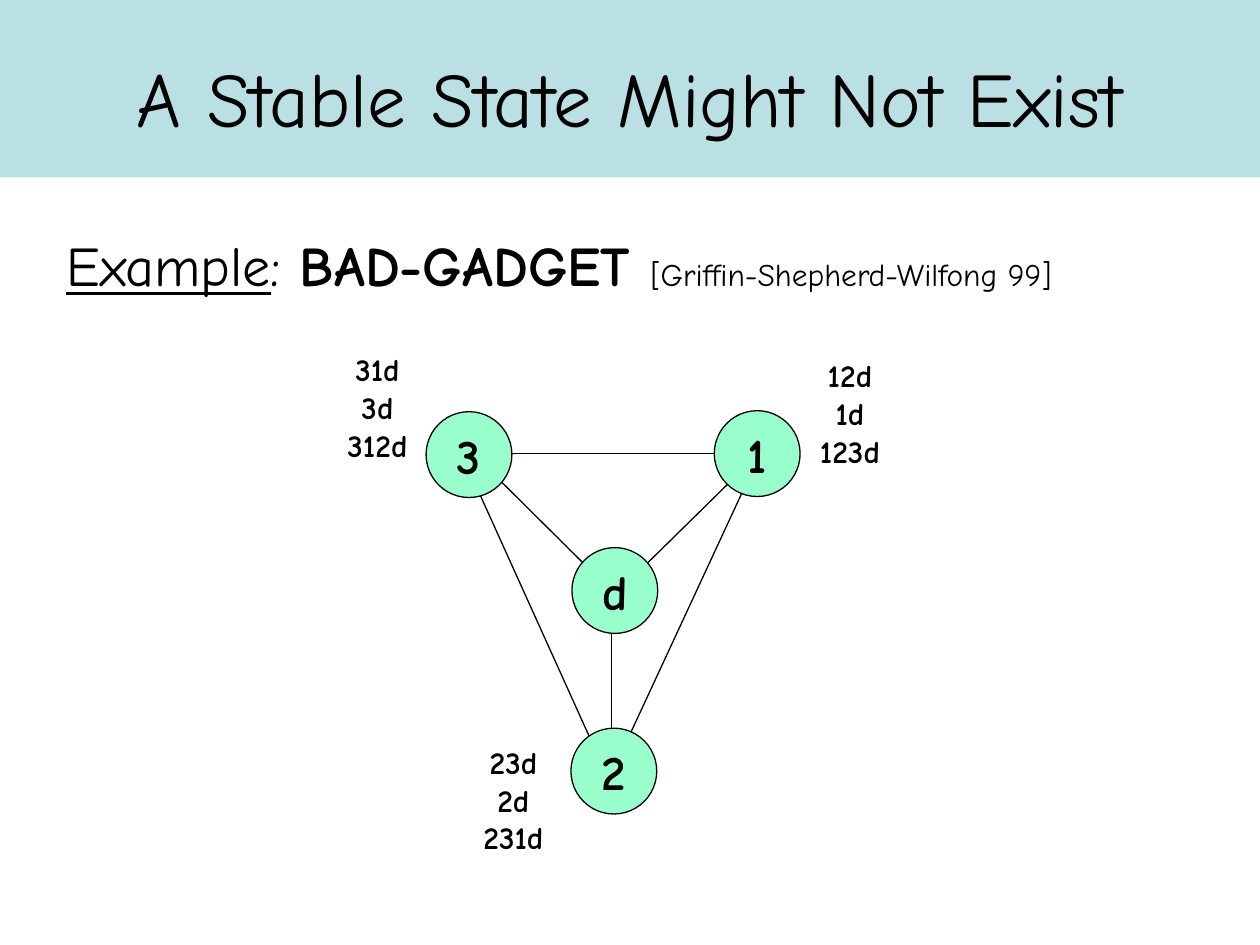
from lxml import etree
from pptx import Presentation
from pptx.dml.color import RGBColor
from pptx.enum.shapes import MSO_CONNECTOR, MSO_SHAPE
from pptx.enum.text import MSO_ANCHOR, PP_ALIGN
from pptx.oxml.ns import qn
from pptx.util import Cm, Pt

RECT, OVAL = MSO_SHAPE.RECTANGLE, MSO_SHAPE.OVAL
LINE = MSO_CONNECTOR.STRAIGHT
MID, TOP = MSO_ANCHOR.MIDDLE, MSO_ANCHOR.TOP
LEFT, CENTER = PP_ALIGN.LEFT, PP_ALIGN.CENTER
FONT = "Comic Neue"
COLORS = {"band": "BBE0E3", "node": "99FFCC", "ink": "000000"}

NODE = 1.73  # node diameter, cm
NODES = {"3": (2.01, 1.37), "1": (7.82, 1.35), "2": (4.93, 7.75), "d": (4.95, 4.11)}
EDGES = [
    (2.92, 2.18, 5.74, 4.98),  # 3 to d
    (2.72, 2.21, 5.59, 8.56),  # 3 to 2
    (5.74, 8.69, 5.74, 5.08),  # 2 to d
    (8.69, 2.24, 5.72, 5.16),  # 1 to d
    (2.82, 2.21, 8.76, 2.21),  # 3 to 1
    (5.87, 8.41, 8.76, 2.18),  # 2 to 1
]
RANKS = [
    (0, 0, 2.06, False, ["31d", "3d", "312d"]),
    (2.74, 7.92, 2.06, False, ["23d", "2d", "231d"]),
    (9.35, 0.13, 2.41, True, ["12d", "1d", "123d"]),
]


def color(name):
    return RGBColor.from_string(COLORS[name])


def write(par, text, size, bold=False, under=False):
    run = par.add_run()
    run.text = text
    font = run.font
    font.name, font.size = FONT, Pt(size)
    font.bold, font.underline = bold, under
    font.color.rgb = color("ink")


def set_frame(shape, align, anchor=MID, wrap=True):
    frame = shape.text_frame
    frame.word_wrap, frame.vertical_anchor = wrap, anchor
    frame.paragraphs[0].alignment = align
    return frame


def add_solid(slide, kind, box, fill):
    shape = slide.shapes.add_shape(kind, *map(Cm, box))
    shape.shadow.inherit = False
    shape.fill.solid()
    shape.fill.fore_color.rgb = color(fill)
    return shape


def add_header(slide, x, y, w, h):
    # Band goes behind the title
    band = add_solid(slide, RECT, (x, y, w, h), "band")
    band.line.fill.background()
    slide.shapes._spTree.insert(2, band._element)
    title = slide.shapes.title
    title.left, title.top = Cm(x + 1.27), Cm(y + 0.36)
    title.width, title.height = Cm(w - 2.54), Cm(3.18)
    frame = set_frame(title, CENTER)
    write(frame.paragraphs[0], "A Stable State Might Not Exist", 44)


def add_intro(slide, x, y, w, h):
    box = slide.shapes.add_textbox(Cm(x), Cm(y), Cm(w), Cm(h))
    par = set_frame(box, LEFT).paragraphs[0]
    write(par, "Example", 32, under=True)
    write(par, ": ", 32)
    write(par, "BAD-GADGET ", 32, bold=True)
    write(par, "[Griffin-Shepherd-Wilfong 99]", 18)


def add_edge(slide, x1, y1, x2, y2):
    edge = slide.shapes.add_connector(LINE, Cm(x1), Cm(y1), Cm(x2), Cm(y2))
    edge.line.color.rgb = color("ink")
    edge.line.width = Pt(0.75)
    etree.SubElement(edge._element.spPr, qn("a:effectLst"))


def add_node(slide, x, y, name):
    node = add_solid(slide, OVAL, (x, y, NODE, NODE), "node")
    node.line.color.rgb = color("ink")
    node.line.width = Pt(0.75)
    frame = set_frame(node, CENTER, wrap=False)
    write(frame.paragraphs[0], name, 28, bold=True)


def add_ranks(slide, x, y, w, wrap, routes):
    box = slide.shapes.add_textbox(Cm(x), Cm(y), Cm(w), Cm(2.54))
    frame = set_frame(box, CENTER, TOP, wrap)
    for i, route in enumerate(routes):
        par = frame.add_paragraph() if i else frame.paragraphs[0]
        par.alignment = CENTER
        write(par, route, 18, bold=True)


def add_graph(slide, x, y):
    # Edges lie under the nodes
    for x1, y1, x2, y2 in EDGES:
        add_edge(slide, x + x1, y + y1, x + x2, y + y2)
    for name, (dx, dy) in NODES.items():
        add_node(slide, x + dx, y + dy, name)
    # Ranked routes beside each node
    for dx, dy, w, wrap, routes in RANKS:
        add_ranks(slide, x + dx, y + dy, w, wrap, routes)


def main():
    deck = Presentation()
    deck.slide_width, deck.slide_height = Cm(25.4), Cm(19.05)
    slide = deck.slides.add_slide(deck.slide_layouts[5])
    add_header(slide, 0, 0, 25.4, 3.58)
    add_intro(slide, 1.09, 3.73, 22.86, 3.18)
    add_graph(slide, 6.58, 6.93)
    deck.save("out.pptx")


if __name__ == "__main__":
    main()
